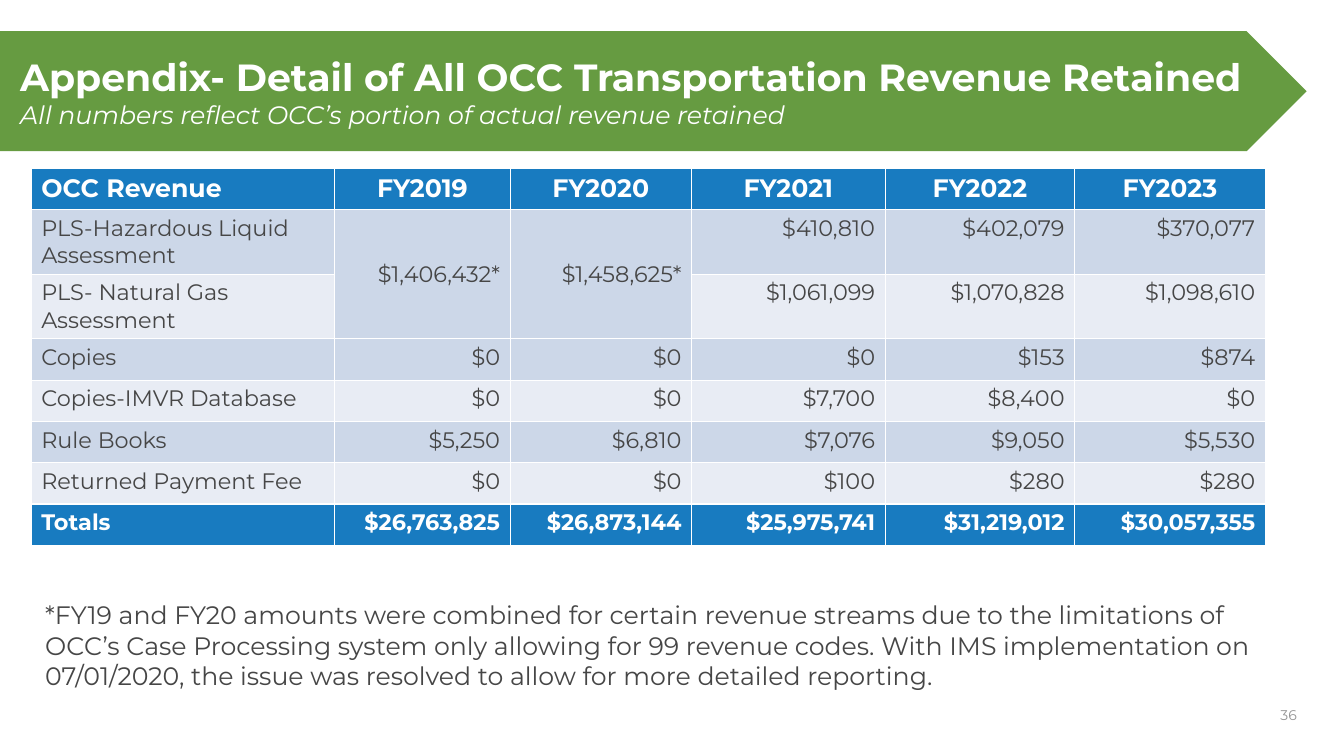
"""Build the appendix slide on transportation revenue retained."""
from pptx import Presentation
from pptx.dml.color import RGBColor
from pptx.enum.shapes import MSO_SHAPE
from pptx.enum.text import MSO_ANCHOR, MSO_AUTO_SIZE, PP_ALIGN
from pptx.util import Inches, Pt

TITLE = "Appendix- Detail of All OCC Transportation Revenue Retained"
SUBTITLE = "All numbers reflect OCC’s portion of actual revenue retained"
ROWS = [
    ("OCC Revenue", "FY2019", "FY2020", "FY2021", "FY2022", "FY2023"),
    ("PLS-Hazardous Liquid Assessment", "$1,406,432*", "$1,458,625*",
     "$410,810", "$402,079", "$370,077"),
    ("PLS- Natural Gas Assessment", None, None,
     "$1,061,099", "$1,070,828", "$1,098,610"),
    ("Copies", "$0", "$0", "$0", "$153", "$874"),
    ("Copies-IMVR Database", "$0", "$0", "$7,700", "$8,400", "$0"),
    ("Rule Books", "$5,250", "$6,810", "$7,076", "$9,050", "$5,530"),
    ("Returned Payment Fee", "$0", "$0", "$100", "$280", "$280"),
    ("Totals", "$26,763,825", "$26,873,144", "$25,975,741",
     "$31,219,012", "$30,057,355"),
]
NOTE = (
    "*FY19 and FY20 amounts were combined for certain revenue streams due to "
    "the limitations of OCC’s Case Processing system only allowing for 99 "
    "revenue codes. With IMS implementation on 07/01/2020, the issue was "
    "resolved to allow for more detailed reporting."
)
PAGE = "36"
WIDTHS = (3.01, 1.74, 1.8, 1.92, 1.88, 1.89)
HEIGHTS = (0.41, 0.64, 0.64, 0.41, 0.41, 0.41, 0.41, 0.41)

FONT = "Montserrat"
GREEN = RGBColor(0x66, 0x9B, 0x41)
BLUE = RGBColor(0x18, 0x7B, 0xC0)
BANDS = (RGBColor(0xE8, 0xEC, 0xF4), RGBColor(0xCC, 0xD7, 0xE8))
WHITE = RGBColor(0xFF, 0xFF, 0xFF)
DARK = RGBColor(0x46, 0x46, 0x46)
GRAY = RGBColor(0x94, 0x94, 0x94)


def add_run(para, text, size, color, bold=False, italic=False):
    """Add one formatted run to a paragraph."""
    run = para.add_run()
    run.text = text
    font = run.font
    font.name, font.size = FONT, Pt(size)
    font.bold, font.italic = bold, italic
    font.color.rgb = color


def add_text(slide, box, text, size, color, align=PP_ALIGN.LEFT):
    """Add a wrapped text box with one paragraph and return its frame."""
    frame = slide.shapes.add_textbox(*map(Inches, box)).text_frame
    frame.word_wrap = True
    frame.paragraphs[0].alignment = align
    add_run(frame.paragraphs[0], text, size, color)
    return frame


def add_banner(slide):
    """Add the green arrow with the title on top of it."""
    plate = slide.shapes.add_shape(
        MSO_SHAPE.PENTAGON, 0, Inches(0.31), Inches(12.96), Inches(1.19))
    plate.shadow.inherit = False
    plate.fill.solid()
    plate.fill.fore_color.rgb = GREEN
    plate.line.fill.background()
    title = slide.shapes.title
    title.element.addprevious(plate.element)
    title.left, title.top = Inches(0.2), Inches(0.45)
    title.width, title.height = Inches(12.46), Inches(0.92)
    frame = title.text_frame
    frame.auto_size = MSO_AUTO_SIZE.NONE
    frame.vertical_anchor = MSO_ANCHOR.MIDDLE
    frame.margin_left = 0
    para = frame.paragraphs[0]
    para.alignment = PP_ALIGN.LEFT
    add_run(para, TITLE, 27, WHITE, bold=True)
    para.add_line_break()
    add_run(para, SUBTITLE, 18, WHITE, italic=True)


def add_grid(slide):
    """Add the revenue table with its header, bands and totals."""
    table = slide.shapes.add_table(
        len(ROWS), len(WIDTHS), Inches(0.31), Inches(1.67),
        Inches(sum(WIDTHS)), Inches(sum(HEIGHTS))).table
    table.last_row = True
    for col, width in zip(table.columns, WIDTHS):
        col.width = Inches(width)
    for row, height in zip(table.rows, HEIGHTS):
        row.height = Inches(height)
    last = len(ROWS) - 1
    for r, row in enumerate(ROWS):
        strong = r in (0, last)
        for c, text in enumerate(row):
            cell = table.cell(r, c)
            cell.fill.solid()
            cell.fill.fore_color.rgb = BLUE if strong else BANDS[r % 2]
            if text is None:
                above = table.cell(r - 1, c)
                above.merge(cell)
                above.vertical_anchor = MSO_ANCHOR.MIDDLE
                continue
            para = cell.text_frame.paragraphs[0]
            if c:
                para.alignment = PP_ALIGN.RIGHT if r else PP_ALIGN.CENTER
            add_run(para, text, 16 if r else 18,
                    WHITE if strong else DARK, bold=strong)


def main():
    """Build and save the deck."""
    deck = Presentation()
    deck.slide_width, deck.slide_height = Inches(13.33), Inches(7.5)
    slide = deck.slides.add_slide(deck.slide_layouts[5])
    add_banner(slide)
    add_grid(slide)
    add_text(slide, (0.35, 5.9, 12.2, 1.01), NOTE, 18, DARK)
    page = add_text(slide, (9.96, 6.98, 3, 0.22), PAGE, 10, GRAY,
                    PP_ALIGN.RIGHT)
    page.vertical_anchor = MSO_ANCHOR.MIDDLE
    deck.save("out.pptx")


if __name__ == "__main__":
    main()
